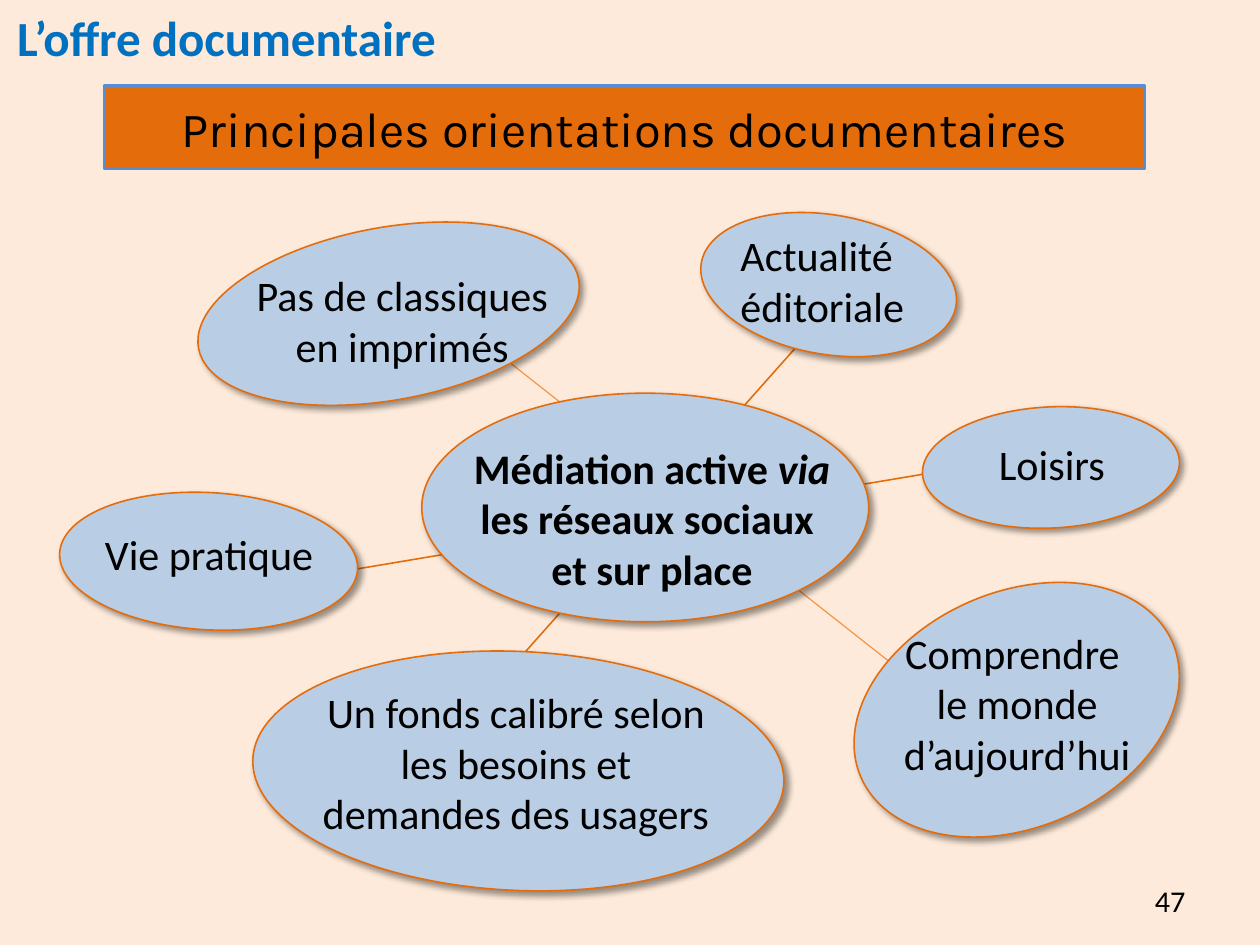
"""Build the slide on the main directions of the document collection."""
from dataclasses import dataclass

from lxml import etree
from pptx import Presentation
from pptx import util as u
from pptx.dml.color import RGBColor
from pptx.enum import shapes, text
from pptx.oxml import ns

CM_PER_INCH = 2.54
ORANGE, PALE_BLUE, BLACK = "E46C0A", "B9CDE5", "000000"
LEFT, CENTER, RIGHT = text.PP_ALIGN.LEFT, text.PP_ALIGN.CENTER, text.PP_ALIGN.RIGHT


@dataclass(frozen=True)
class Box:
    left: float
    top: float
    width: float
    height: float

    def lengths(self) -> list:
        return [u.Inches(v) for v in (self.left, self.top, self.width, self.height)]


@dataclass(frozen=True)
class Spoke:
    start: tuple
    end: tuple
    color: str = ORANGE
    weight: float = 1


@dataclass(frozen=True)
class Bubble:
    box: Box
    rotation: float = 0


@dataclass(frozen=True)
class Style:
    size: float = 26.5
    font: str = "Calibri"
    color: str = BLACK
    bold: bool = False
    align: int = CENTER


@dataclass(frozen=True)
class Label:
    box: Box
    wording: str
    style: Style = Style()
    italic: str = ""
    grow: bool = True
    margins: tuple = (0.1, 0.05)


PLAIN_LEFT = Style(align=LEFT)
WIDE_MARGINS = (0.11, 0.06)

SPOKES = [
    Spoke((8.07, 4.15), (2.99, 5)),
    Spoke((6.99, 3.01), (4.59, 5.71)),
    Spoke((7.77, 5.78), (4.47, 3.18), "F69240", 0.75),
]
BUBBLES = [
    Bubble(Box(3.69, 3.44, 3.91, 2)),
    Bubble(Box(6.12, 1.88, 2.26, 1.22), 9.7),
    Bubble(Box(8.07, 3.56, 2.25, 1.06), 357.2),
    Bubble(Box(7.41, 5.18, 2.97, 2.06), 336.6),
    Bubble(Box(2.21, 5.7, 4.65, 2.09), 2.6),
    Bubble(Box(0.52, 4.31, 2.61, 1.2), 3.2),
    Bubble(Box(1.71, 1.99, 3.38, 1.51), 349.7),
]
LABELS = [
    Label(Box(7.9, 7.66, 2.57, 0.44), "47", Style(19, align=RIGHT), grow=False),
    Label(Box(0.04, 0.07, 6.51, 0.5), "L’offre documentaire",
          Style(30.9, color="0070C0", bold=True, align=LEFT), grow=False, margins=WIDE_MARGINS),
    Label(Box(0.82, 4.57, 2.17, 0.55), "Vie pratique", PLAIN_LEFT),
    Label(Box(8.64, 3.79, 1.39, 0.55), "Loisirs", PLAIN_LEFT),
    Label(Box(7.6, 5.44, 2.6, 1.44), "Comprendre \nle monde d’aujourd’hui"),
    Label(Box(6.38, 1.96, 1.69, 0.99), "Actualité éditoriale", PLAIN_LEFT),
    Label(Box(2.13, 2.31, 2.78, 0.99), "Pas de classiques en imprimés"),
    Label(Box(3.86, 3.82, 3.69, 1.44), "Médiation active via les réseaux sociaux \vet sur place",
          Style(bold=True), italic="via"),
    Label(Box(2.65, 5.96, 3.73, 1.44),
          "Un fonds calibré selon les besoins et demandes des usagers"),
]
BANNER = Label(Box(0.91, 0.75, 9.11, 0.73), "Principales orientations documentaires",
               Style(30.9, "Karla"), grow=False, margins=WIDE_MARGINS)


def rgb(color: str) -> RGBColor:
    return RGBColor.from_string(color)


def paint(shape, fill: str, line: str, weight: float) -> None:
    shape.fill.solid()
    shape.fill.fore_color.rgb = rgb(fill)
    shape.line.color.rgb = rgb(line)
    shape.line.width = u.Pt(weight)
    shape.shadow.inherit = False


def add_shadow(shape) -> None:
    effects = shape.element.spPr.find(ns.qn("a:effectLst"))
    shadow = etree.SubElement(effects, ns.qn("a:outerShdw"), blurRad=str(u.Pt(4)),
                              dist=str(u.Pt(3)), dir=str(45 * 60000), rotWithShape="0")
    tint = etree.SubElement(shadow, ns.qn("a:srgbClr"), val=BLACK)
    etree.SubElement(tint, ns.qn("a:alpha"), val="40000")


def split_italic(paragraph, word: str) -> None:
    before, _, after = paragraph.text.partition(word)
    paragraph.text = before
    emphasis = paragraph.add_run()
    emphasis.text = word
    emphasis.font.italic = True
    for index, line in enumerate(after.split("\v")):
        if index:
            paragraph.add_line_break()
        paragraph.add_run().text = line


def write(frame, label: Label) -> None:
    style = label.style
    frame.text = label.wording
    frame.word_wrap = True
    frame.margin_left = frame.margin_right = u.Inches(label.margins[0])
    frame.margin_top = frame.margin_bottom = u.Inches(label.margins[1])
    if label.grow:
        frame.auto_size = text.MSO_AUTO_SIZE.SHAPE_TO_FIT_TEXT
    else:
        frame.vertical_anchor = text.MSO_ANCHOR.MIDDLE
    for paragraph in frame.paragraphs:
        paragraph.alignment = style.align
        if label.italic:
            split_italic(paragraph, label.italic)
        for run in paragraph.runs:
            run.font.size = u.Pt(style.size)
            run.font.name = style.font
            run.font.bold = style.bold
            run.font.color.rgb = rgb(style.color)


def draw_spoke(slide, spoke: Spoke) -> None:
    ends = [u.Inches(v) for v in spoke.start + spoke.end]
    line = slide.shapes.add_connector(shapes.MSO_CONNECTOR.STRAIGHT, *ends)
    line.line.color.rgb = rgb(spoke.color)
    line.line.width = u.Pt(spoke.weight)
    etree.SubElement(line.element.spPr, ns.qn("a:effectLst"))


def draw_bubble(slide, bubble: Bubble) -> None:
    oval = slide.shapes.add_shape(shapes.MSO_SHAPE.OVAL, *bubble.box.lengths())
    oval.rotation = bubble.rotation
    paint(oval, PALE_BLUE, ORANGE, 1)
    add_shadow(oval)


def draw_banner(slide, label: Label) -> None:
    banner = slide.shapes.add_shape(shapes.MSO_SHAPE.RECTANGLE, *label.box.lengths())
    paint(banner, ORANGE, "558ED5", 1.5)
    write(banner.text_frame, label)


def main() -> None:
    deck = Presentation()
    deck.slide_width = u.Inches(28 / CM_PER_INCH)
    deck.slide_height = u.Inches(21 / CM_PER_INCH)
    slide = deck.slides.add_slide(deck.slide_layouts[6])
    slide.background.fill.solid()
    slide.background.fill.fore_color.rgb = rgb("FDEADA")
    for spoke in SPOKES:
        draw_spoke(slide, spoke)
    for bubble in BUBBLES:
        draw_bubble(slide, bubble)
    draw_banner(slide, BANNER)
    for label in LABELS:
        write(slide.shapes.add_textbox(*label.box.lengths()).text_frame, label)
    deck.save("out.pptx")


if __name__ == "__main__":
    main()
